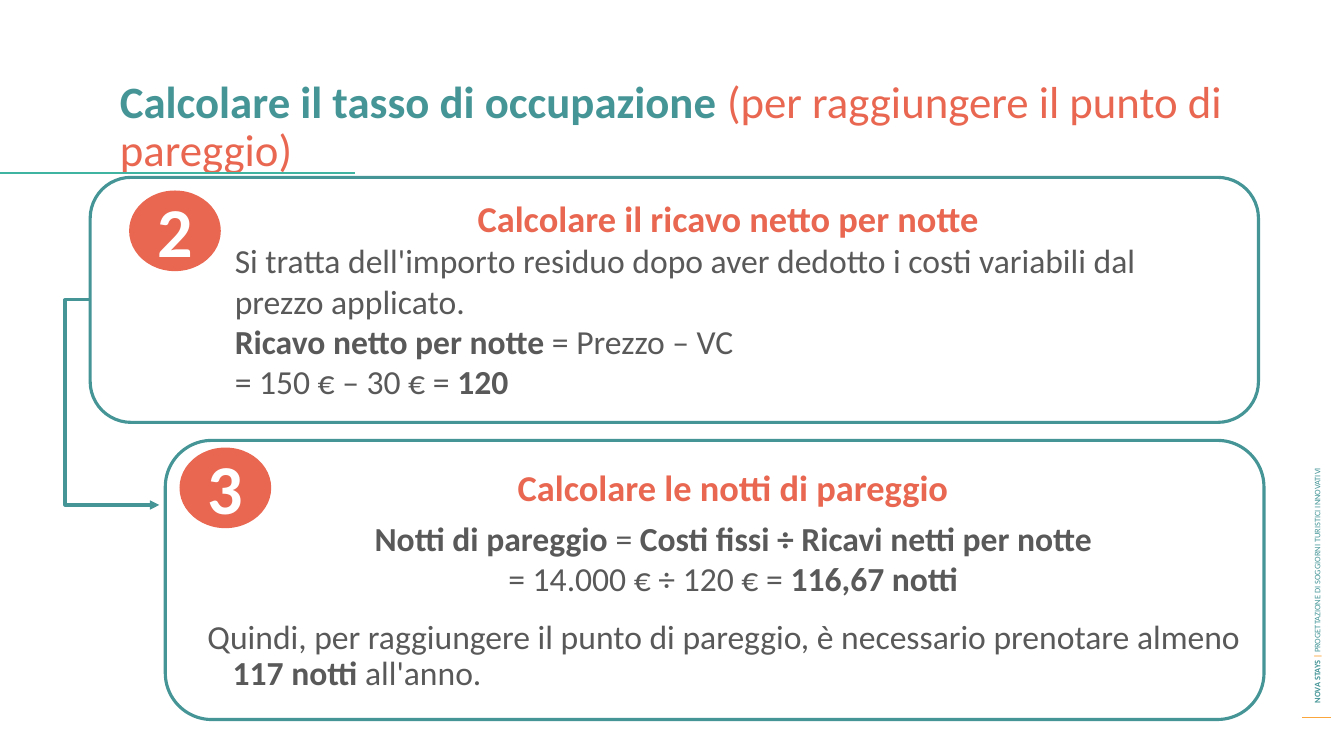
"""Build the slide on the break-even occupancy rate."""
import pptx
import pptx.dml.color
import pptx.enum.shapes
import pptx.enum.text
import pptx.oxml
import pptx.util
from lxml import etree

Pt = pptx.util.Pt
RGBColor = pptx.dml.color.RGBColor
SHAPE = pptx.enum.shapes.MSO_SHAPE
CONNECTOR = pptx.enum.shapes.MSO_CONNECTOR
ALIGN = pptx.enum.text.PP_ALIGN
ANCHOR = pptx.enum.text.MSO_ANCHOR

TEAL = RGBColor(0x45, 0x95, 0x97)
GREEN = RGBColor(0x3F, 0xB5, 0xA1)
CORAL = RGBColor(0xE9, 0x67, 0x51)
AMBER = RGBColor(0xFB, 0xA6, 0x3B)
RULE_AMBER = RGBColor(0xFB, 0xA6, 0x3D)
GREY = RGBColor(0x59, 0x59, 0x59)
WHITE = RGBColor(0xFF, 0xFF, 0xFF)


def add_text(shapes, left, top, width, height):
    """Add a wrapping text box."""
    box = shapes.add_textbox(Pt(left), Pt(top), Pt(width), Pt(height))
    box.text_frame.word_wrap = True
    return box


def add_paragraph(frame, runs, size, color=None, bold=None, align=None):
    """Write (text, bold, color) runs as the next paragraph of a frame."""
    first = frame.paragraphs[0]
    paragraph = frame.add_paragraph() if first.runs else first
    paragraph.alignment = align
    font = paragraph.font
    font.name, font.size, font.bold = "Calibri", Pt(size), bold
    if color is not None:
        font.color.rgb = color
    for text, run_bold, run_color in runs:
        for index, line in enumerate(text.split("\n")):
            if index:
                paragraph.add_line_break()
            if line:
                run = paragraph.add_run()
                run.text = line
                if run_bold is not None:
                    run.font.bold = run_bold
                if run_color is not None:
                    run.font.color.rgb = run_color
    return paragraph


def add_heading(frame, text):
    """Write the centred heading of a step."""
    return add_paragraph(frame, [(text, None, None)], 26, CORAL, True, ALIGN.CENTER)


def add_body(frame, parts, align=None):
    """Write grey step text from (text, bold) parts."""
    runs = [(text, bold, None) for text, bold in parts]
    return add_paragraph(frame, runs, 24, GREY, align=align)


def add_panel(shapes, left, top, width, height):
    """Add the outlined panel of a step."""
    panel = shapes.add_shape(SHAPE.FLOWCHART_ALTERNATE_PROCESS,
                             Pt(left), Pt(top), Pt(width), Pt(height))
    panel.shadow.inherit = False
    panel.fill.background()
    panel.line.color.rgb = TEAL
    panel.line.width = Pt(2.25)


def add_line(shapes, kind, start, end, color, width):
    """Add a connector without shadow."""
    line = shapes.add_connector(kind, *map(Pt, start + end))
    line.line.color.rgb = color
    line.line.width = Pt(width)
    etree.SubElement(line._element.spPr, pptx.oxml.ns.qn("a:effectLst"))
    return line


def add_step_arrow(shapes, start, end, bend):
    """Add the elbow arrow that leads from one step to the next."""
    qn = pptx.oxml.ns.qn
    arrow = add_line(shapes, CONNECTOR.ELBOW, start, end, TEAL, 2.25)
    properties = arrow._element.spPr
    adjustments = properties.find(qn("a:prstGeom")).get_or_add_avLst()
    etree.SubElement(adjustments, qn("a:gd"), name="adj1", fmla=f"val {bend}")
    etree.SubElement(properties.find(qn("a:ln")), qn("a:tailEnd"), type="triangle")


def add_badge(shapes, number, left, top):
    """Add a numbered oval."""
    badge = shapes.add_group_shape().shapes
    oval = badge.add_shape(SHAPE.OVAL, Pt(left), Pt(top), Pt(65.5), Pt(57.6))
    oval.shadow.inherit = False
    oval.fill.solid()
    oval.fill.fore_color.rgb = CORAL
    oval.line.fill.background()
    label = add_text(badge, left, top - 5.8, 65.5, 67.7)
    add_paragraph(label.text_frame, [(number, None, None)], 50, WHITE, True, ALIGN.CENTER)


def add_side_label(shapes):
    """Add the vertical project label and its rule."""
    add_line(shapes, CONNECTOR.STRAIGHT, (930.2, 512.6), (951.1, 512.6), RULE_AMBER, 0.75)
    label = add_text(shapes, 733, 294.5, 415.4, 14.4)
    label.rotation = 270
    label.text_frame.vertical_anchor = ANCHOR.MIDDLE
    add_paragraph(label.text_frame, [
        ("NOVA STAYS ", True, TEAL), ("| ", True, AMBER),
        ("PROGETTAZIONE DI SOGGIORNI TURISTICI INNOVATIVI", False, TEAL)], 6)


def add_title(shapes):
    """Add the slide title."""
    title = add_text(shapes, 78.5, 53.3, 835.9, 63.4)
    paragraph = add_paragraph(title.text_frame, [
        ("Calcolare il tasso di occupazione ", True, TEAL),
        ("(per raggiungere il punto di pareggio)", False, CORAL)], 32)
    paragraph.line_spacing = 0.9


def add_net_revenue(shapes):
    """Add the text of step 2."""
    frame = add_text(shapes, 160.6, 136.8, 719.3, 63.4).text_frame
    add_heading(frame, "Calcolare il ricavo netto per notte")
    add_body(frame, [("Si tratta dell'importo residuo dopo aver dedotto "
                      "i costi variabili dal prezzo applicato.", False)])
    add_body(frame, [("Ricavo netto per notte ", True),
                     ("= Prezzo – VC\n= 150 € – 30 € =", False), (" 120", True)])


def add_break_even(shapes):
    """Add the text of step 3."""
    frame = add_text(shapes, 141.1, 329, 765.4, 63.4).text_frame
    heading = add_heading(frame, "Calcolare le notti di pareggio")
    formula = add_body(frame, [
        ("Notti di pareggio ", True), ("= ", False),
        ("Costi fissi ÷ Ricavi netti per notte\n", True),
        ("= 14.000 € ÷ 120 € =", False), (" 116,67 notti", True)], ALIGN.CENTER)
    heading.space_after = formula.space_after = Pt(6)
    conclusion = add_body(frame, [
        ("Quindi, per raggiungere il punto di pareggio, "
         "è necessario prenotare almeno", False),
        (" 117 notti ", True), ("all'anno.", False)])
    conclusion.line_spacing = 0.9
    conclusion.space_before = Pt(10)
    indents = conclusion._p.get_or_add_pPr()
    indents.set("marL", str(Pt(18)))
    indents.set("indent", str(Pt(-18)))


def main():
    """Compose and save the slide."""
    deck = pptx.Presentation()
    deck.slide_width, deck.slide_height = Pt(960), Pt(540)
    shapes = deck.slides.add_slide(deck.slide_layouts[6]).shapes
    add_side_label(shapes)
    add_panel(shapes, 64.4, 126.7, 834.5, 175)
    add_title(shapes)
    add_line(shapes, CONNECTOR.STRAIGHT, (0, 123.4), (253.4, 123.4), GREEN, 1.5)
    add_net_revenue(shapes)
    add_panel(shapes, 118.1, 314.6, 784.8, 199.4)
    add_step_arrow(shapes, (64.4, 214.2), (113.8, 360.7), -36400)
    add_break_even(shapes)
    add_badge(shapes, "3", 128.2, 319.7)
    add_badge(shapes, "2", 92.2, 136.1)
    deck.save("out.pptx")


if __name__ == "__main__":
    main()
